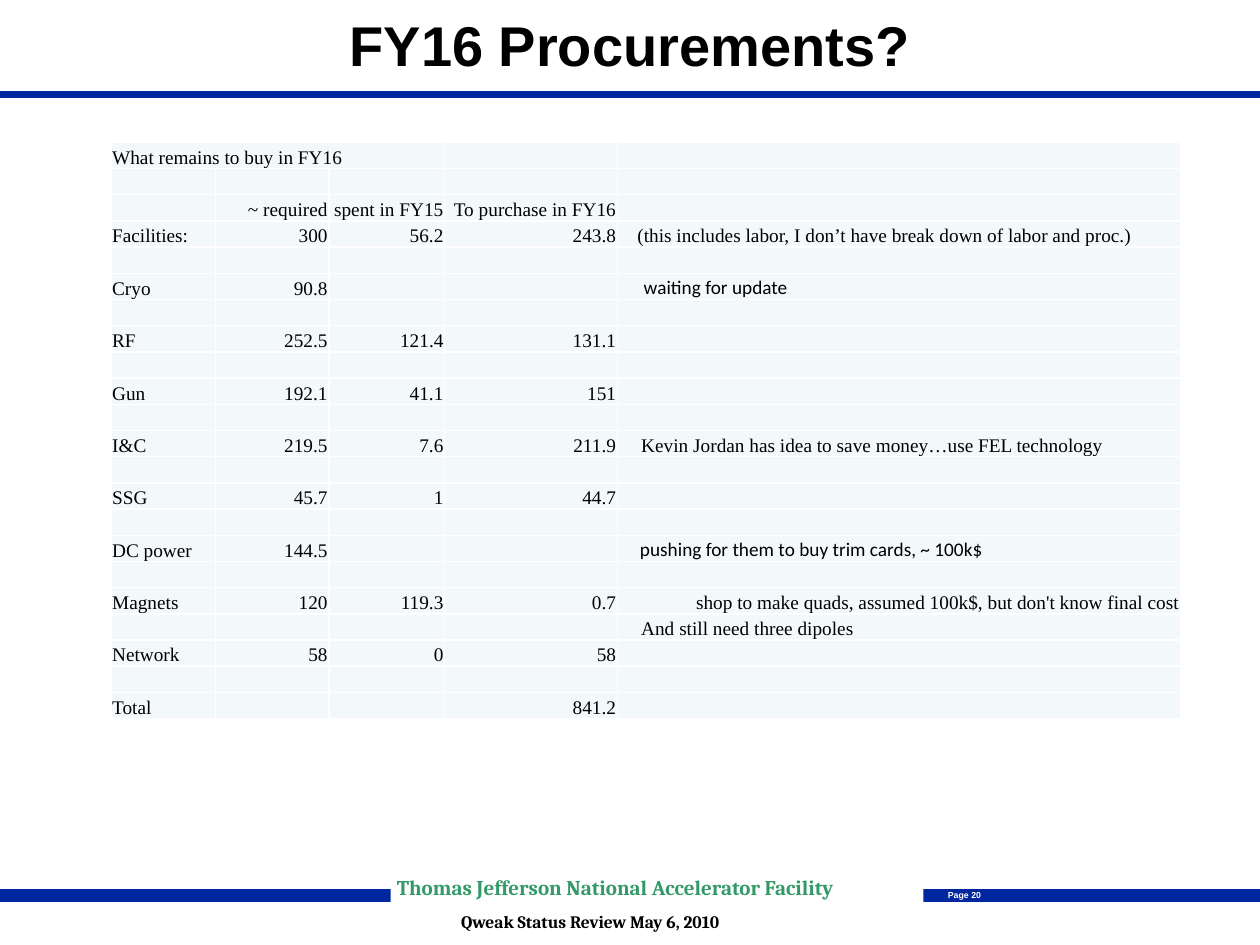
from dataclasses import dataclass

from lxml.etree import SubElement
from pptx import Presentation
from pptx.dml.color import RGBColor
from pptx.enum.shapes import MSO_CONNECTOR, MSO_SHAPE
from pptx.enum.text import MSO_ANCHOR, PP_ALIGN
from pptx.oxml.ns import qn
from pptx.util import Inches, Pt

COLORS = {
    "bar": "00279F",
    "facility": "339966",
    "text": "000000",
    "white": "FFFFFF",
    "cell": "F3F9FA",
}
SERIF, SANS, NOTE = "Times New Roman", "Arial", "Calibri"


@dataclass
class Item:
    name: str
    required: str = ""
    spent: str = ""
    to_buy: str = ""
    note: str = ""
    indent: float = 0
    font: str = SERIF
    align: PP_ALIGN = PP_ALIGN.LEFT


@dataclass
class Label:
    text: str
    box: tuple
    size: float
    font: str
    color: str = "text"
    align: PP_ALIGN = PP_ALIGN.LEFT
    anchor: MSO_ANCHOR = MSO_ANCHOR.TOP
    filled: bool = False
    inset: float = 0
    spacing: float = 1


ITEMS = [
    Item("Facilities:", "300", "56.2", "243.8",
         "(this includes labor, I don’t have break down of labor and proc.)", 0.15),
    Item("Cryo", "90.8", note="waiting for update", indent=0.2, font=NOTE),
    Item("RF", "252.5", "121.4", "131.1"),
    Item("Gun", "192.1", "41.1", "151"),
    Item("I&C", "219.5", "7.6", "211.9",
         "Kevin Jordan has idea to save money…use FEL technology", 0.18),
    Item("SSG", "45.7", "1", "44.7"),
    Item("DC power", "144.5", note="pushing for them to buy trim cards, ~ 100k$",
         indent=0.17, font=NOTE),
    Item("Magnets", "120", "119.3", "0.7",
         "shop to make quads, assumed 100k$, but don't know final cost",
         align=PP_ALIGN.RIGHT),
    Item("Network", "58", "0", "58"),
    Item("Total", to_buy="841.2"),
]
HEADINGS = ["~ required", "spent in FY15", "To purchase in FY16"]
COLUMNS = [0.83, 0.9, 0.92, 1.37, 4.47]
FIRST_ITEM_ROW, ITEM_STEP = 3, 2
ROW_COUNT = FIRST_ITEM_ROW + ITEM_STEP * len(ITEMS) - 1

LABELS = [
    Label("Thomas Jefferson National Accelerator Facility", (3.1, 6.98, 4.23, 0.19),
          12, SERIF, "facility", filled=True, inset=0.05, spacing=0.8),
    Label("Page 20", (7.42, 7.01, 0.47, 0.18), 5, SANS, "white", PP_ALIGN.CENTER,
          MSO_ANCHOR.MIDDLE),
    Label("Qweak Status Review May 6, 2010", (3.66, 7.26, 2.97, 0.14),
          10, SERIF, filled=True, spacing=0.8),
    Label("FY16 Procurements?", (0.5, 0, 9, 0.7), 32, SANS, align=PP_ALIGN.CENTER,
          anchor=MSO_ANCHOR.MIDDLE),
]
for footer in (LABELS[0], LABELS[2]):
    footer.font = "Cambria"


def rgb(name: str) -> RGBColor:
    return RGBColor.from_string(COLORS[name])


def style(p, size: float, font: str, color: str, bold: bool) -> None:
    p.font.size = Pt(size)
    p.font.name = font
    p.font.bold = bold
    p.font.color.rgb = rgb(color)


def add_bar(s, y: float, width: float) -> None:
    line = s.shapes.add_connector(MSO_CONNECTOR.STRAIGHT, 0, Inches(y),
                                  Inches(10), Inches(y))
    line.line.color.rgb = rgb("bar")
    line.line.width = Pt(width)
    SubElement(line._element.spPr, qn("a:effectLst"))


def add_label(s, label: Label) -> None:
    box = [Inches(v) for v in label.box]
    if label.filled:
        sp = s.shapes.add_shape(MSO_SHAPE.RECTANGLE, *box)
        sp.shadow.inherit = False
        sp.fill.solid()
        sp.fill.fore_color.rgb = rgb("white")
        sp.line.fill.background()
    else:
        sp = s.shapes.add_textbox(*box)
    tf = sp.text_frame
    tf.word_wrap = True
    tf.vertical_anchor = label.anchor
    tf.margin_left = Inches(label.inset)
    tf.margin_right = tf.margin_top = tf.margin_bottom = 0
    p = tf.paragraphs[0]
    p.text = label.text
    p.alignment = label.align
    p.line_spacing = label.spacing
    style(p, label.size, label.font, label.color, True)


def format_cell(cell) -> None:
    """Give a cell white borders, the pale fill and the tight margins."""
    tc_pr = cell._tc.get_or_add_tcPr()
    for side in ("a:lnL", "a:lnR", "a:lnT", "a:lnB"):
        ln = SubElement(tc_pr, qn(side), w=str(Pt(1)))
        fill = SubElement(ln, qn("a:solidFill"))
        SubElement(fill, qn("a:srgbClr"), val=COLORS["white"])
    cell.fill.solid()
    cell.fill.fore_color.rgb = rgb("cell")
    cell.vertical_anchor = MSO_ANCHOR.BOTTOM
    cell.margin_left = cell.margin_right = cell.margin_top = Inches(0.01)
    cell.margin_bottom = 0
    style(cell.text_frame.paragraphs[0], 11, SERIF, "text", False)


def write(cell, text: str, align: PP_ALIGN = PP_ALIGN.LEFT,
          indent: float = 0, font: str = SERIF) -> None:
    if not text:
        return
    p = cell.text_frame.paragraphs[0]
    p.text = text
    p.alignment = align
    p.font.name = font
    cell.margin_left = Inches(0.01 + indent)


def add_procurement_table(s) -> None:
    height = Inches(4.58)
    table = s.shapes.add_table(ROW_COUNT, len(COLUMNS), Inches(0.88), Inches(1.13),
                               Inches(sum(COLUMNS)), height).table
    table.first_row = table.horz_banding = False
    for column, width in zip(table.columns, COLUMNS):
        column.width = Inches(width)
    for row in table.rows:
        row.height = height // ROW_COUNT
    for cell in table.iter_cells():
        format_cell(cell)

    table.cell(0, 0).merge(table.cell(0, 2))
    write(table.cell(0, 0), "What remains to buy in FY16")
    for col, heading in enumerate(HEADINGS, 1):
        write(table.cell(2, col), heading, PP_ALIGN.RIGHT)
    for i, item in enumerate(ITEMS):
        row = FIRST_ITEM_ROW + ITEM_STEP * i
        write(table.cell(row, 0), item.name)
        for col, value in enumerate((item.required, item.spent, item.to_buy), 1):
            write(table.cell(row, col), value, PP_ALIGN.RIGHT)
        write(table.cell(row, 4), item.note, item.align, item.indent, item.font)
        if item.name == "Magnets":
            write(table.cell(row + 1, 4), "And still need three dipoles", indent=0.18)


def main() -> None:
    prs = Presentation()
    prs.slide_width, prs.slide_height = Inches(10), Inches(7.5)
    s = prs.slides.add_slide(prs.slide_layouts[6])
    add_bar(s, 0.75, 4.5)
    add_bar(s, 7.11, 7.25)
    for label in LABELS:
        add_label(s, label)
    add_procurement_table(s)
    prs.save("out.pptx")


if __name__ == "__main__":
    main()
